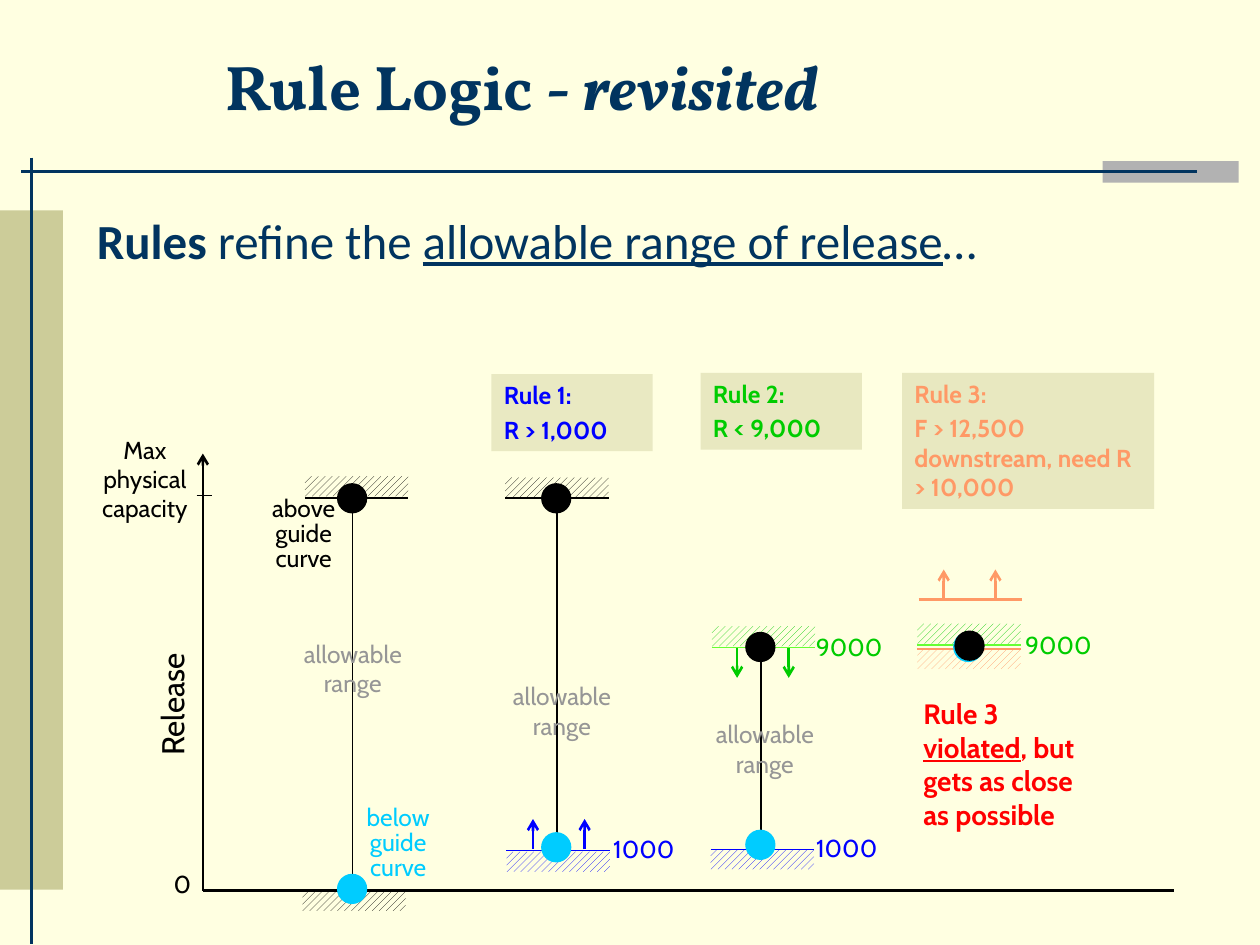
from lxml import etree
from pptx import Presentation
from pptx.dml.color import RGBColor
from pptx.enum.dml import MSO_PATTERN
from pptx.enum.shapes import MSO_CONNECTOR, MSO_SHAPE
from pptx.enum.text import MSO_ANCHOR, PP_ALIGN
from pptx.oxml.ns import qn
from pptx.util import Inches, Pt

INK = {
    "paper": "FFFFE1", "navy": "01345F", "sand": "CCCC99", "silver": "B2B2B2",
    "black": "000000", "grey": "969696", "sky": "00CCFF", "blue": "0000FF",
    "green": "00CC00", "lime": "66FF33", "orange": "FF9966", "red": "FF0000",
}
COLOR = {name: RGBColor.from_string(value) for name, value in INK.items()}

deck = Presentation()
deck.slide_width, deck.slide_height = Inches(10), Inches(7.5)
COL, ROW = deck.slide_width / 100, deck.slide_height / 75
slide = deck.slides.add_slide(deck.slide_layouts[6])
slide.background.fill.solid()
slide.background.fill.fore_color.rgb = COLOR["paper"]
shapes = slide.shapes


def stroke(x1, y1, x2, y2, ink="black", weight=0.75, arrow=False):
    line = shapes.add_connector(MSO_CONNECTOR.STRAIGHT, int(x1 * COL), int(y1 * ROW),
                                int(x2 * COL), int(y2 * ROW))
    line.line.color.rgb, line.line.width = COLOR[ink], Pt(weight)
    properties = line.line._get_or_add_ln().getparent()
    etree.SubElement(properties, qn("a:effectLst"))
    if arrow:
        etree.SubElement(properties.find(qn("a:ln")), qn("a:tailEnd"), type="arrow")


def block(x, y, w, h, paragraphs=(), ink="black", kind=None, fill=None, alpha=100,
          layout=None, **font):
    area = int(x * COL), int(y * ROW), int(w * COL), int(h * ROW)
    if kind is None:
        item = shapes.add_textbox(*area)
    else:
        item = shapes.add_shape(kind, *area)
        item.shadow.inherit = False
        item.line.fill.background()
        item.fill.solid()
        item.fill.fore_color.rgb = COLOR[fill]
        if alpha < 100:
            tint = item.fill._xPr.find(".//" + qn("a:srgbClr"))
            etree.SubElement(tint, qn("a:alpha"), val=str(alpha * 1000))
    frame = item.text_frame
    frame.word_wrap, frame.vertical_anchor = True, MSO_ANCHOR.TOP
    for index, runs in enumerate(paragraphs):
        paragraph = frame.paragraphs[0] if index == 0 else frame.add_paragraph()
        paragraph.alignment = PP_ALIGN.LEFT
        if index:
            paragraph.space_before = Pt(2.8)
        for attribute, value in (layout or {}).items():
            setattr(paragraph, attribute, value)
        for words, extra in runs:
            run = paragraph.add_run()
            run.text = words
            run.font.color.rgb = COLOR[ink]
            for attribute, value in {"name": "Cabin", "size": Pt(14), **font, **extra}.items():
                setattr(run.font, attribute, value)
    return item


RECT, OVAL = MSO_SHAPE.RECTANGLE, MSO_SHAPE.OVAL
CENTRED = {"alignment": PP_ALIGN.CENTER}
TIGHT = {**CENTRED, "line_spacing": 0.85}

block(87.5, 12.8, 10.8, 1.7, kind=RECT, fill="silver")
stroke(1.7, 13.6, 95, 13.6, "navy", 1.5)
block(0, 16.7, 5, 53.9, kind=RECT, fill="sand")
stroke(2.5, 12.5, 2.5, 74.9, "navy", 1.5)

title = block(16.9, 0.8, 80.7, 11.9, [[("Rule Logic - ", {}), ("revisited", {"italic": True})]],
              "navy", name="Vollkorn", size=Pt(36), bold=True)
title.text_frame.vertical_anchor = MSO_ANCHOR.MIDDLE
block(6.7, 16.9, 90.8, 54.8,
      [[("Rules", {"bold": True}), (" refine the ", {}),
        ("allowable range of release", {"underline": True}), ("…", {})]],
      "navy", layout={"line_spacing": 0.85}, name="Calibri", size=Pt(28))

for x, y, w, h, alpha, ink, heading, condition in [
    (71.6, 29.6, 20, 10.8, 45, "orange", "Rule 3:", "F > 12,500 downstream, need R > 10,000"),
    (55.6, 29.6, 12.8, 6.1, 45, "green", "Rule 2:", "R < 9,000"),
    (39, 29.7, 12.8, 6.1, 42, "blue", "Rule 1:", "R > 1,000"),
]:
    block(x, y, w, h, [[(heading, {})], [(condition, {})]], ink, RECT, "sand", alpha, bold=True)

for x, y, edge, edge_ink, hatch_ink, weight in [
    (24.2, 37.8, 39.5, "black", "black", 1),
    (24, 70.7, 70.7, "black", "black", 0.75),
    (40.1, 37.9, 39.5, "black", "black", 1),
    (40.2, 67.6, 67.5, "blue", "blue", 0.75),
    (56.5, 49.7, 51.4, "lime", "green", 0.75),
    (56.4, 67.4, 67.4, "blue", "blue", 0.75),
    (72.8, 49.5, 51.2, "lime", "green", 0.75),
    (72.8, 51.5, 51.5, "orange", "orange", 0.75),
]:
    hatch = block(x, y, 8.2, 1.6, kind=RECT, fill="paper")
    hatch.fill.patterned()
    hatch.fill.pattern = MSO_PATTERN.WIDE_UPWARD_DIAGONAL
    hatch.fill.fore_color.rgb, hatch.fill.back_color.rgb = COLOR[hatch_ink], COLOR["paper"]
    stroke(x, edge, x + 8.2, edge, edge_ink, weight)

stroke(16.1, 70.7, 16.1, 36, weight=1.5, arrow=True)
stroke(16.1, 70.7, 93.2, 70.7, weight=1.5)
stroke(15.6, 39.3, 16.8, 39.3)
stroke(72.9, 47.6, 81.1, 47.6, "orange", 1.5)

for x, top, bottom in [(28, 39.3, 70.5), (44.2, 39.4, 67.6), (60.4, 51.6, 67.5)]:
    stroke(x, top, x, bottom)
for x, start, end, ink in [(42.3, 67.4, 65, "blue"), (58.5, 51.4, 53.8, "green"),
                           (74.9, 47.6, 45.2, "orange")]:
    for shift in (0, 4.1):
        stroke(x + shift, start, x + shift, end, ink, 1.5, True)

for x, y, ink in [(26.8, 38.4, "black"), (26.8, 69.4, "sky"), (43, 66.1, "sky"),
                  (43, 38.4, "black"), (59.2, 50.2, "black"), (59.2, 65.9, "sky"),
                  (75.7, 50.2, "sky"), (75.8, 50.1, "black")]:
    dot = block(x, y, 2.3, 2.3, kind=OVAL, fill=ink)
    dot.line.color.rgb, dot.line.width = COLOR[ink], Pt(0.75)

for x, y, w, h, words, ink, layout in [
    (6.8, 34, 9.4, 8, "Max physical capacity", "black", CENTRED),
    (12.8, 68.5, 2.9, 3.3, "0", "black", {}),
    (19.7, 39, 8.8, 6.9, "above guide curve", "black", TIGHT),
    (27.2, 63.5, 8.8, 6.9, "below guide curve", "sky", TIGHT),
    (22.1, 50.2, 11.8, 5.7, "allowable range", "grey", CENTRED),
    (38.7, 53.6, 11.8, 5.7, "allowable range", "grey", CENTRED),
    (54.8, 56.6, 11.8, 5.7, "allowable range", "grey", CENTRED),
    (47, 65.7, 8.2, 3.3, "1000", "blue", CENTRED),
    (63.1, 65.6, 8.2, 3.3, "1000", "blue", CENTRED),
    (63.3, 49.7, 8.2, 3.3, "9000", "green", CENTRED),
    (79.9, 49.5, 8.2, 3.3, "9000", "green", CENTRED),
]:
    block(x, y, w, h, [[(words, {})]], ink, layout=layout)

release = block(6, 51.3, 15.3, 4, [[("Release", {})]], size=Pt(18))
release.rotation = 270
block(72.3, 54.8, 14.1, 14.4,
      [[("Rule 3 ", {}), ("violated", {"underline": True}),
        (", but gets as close as possible", {})]], "red", size=Pt(16), bold=True)

deck.save("out.pptx")
